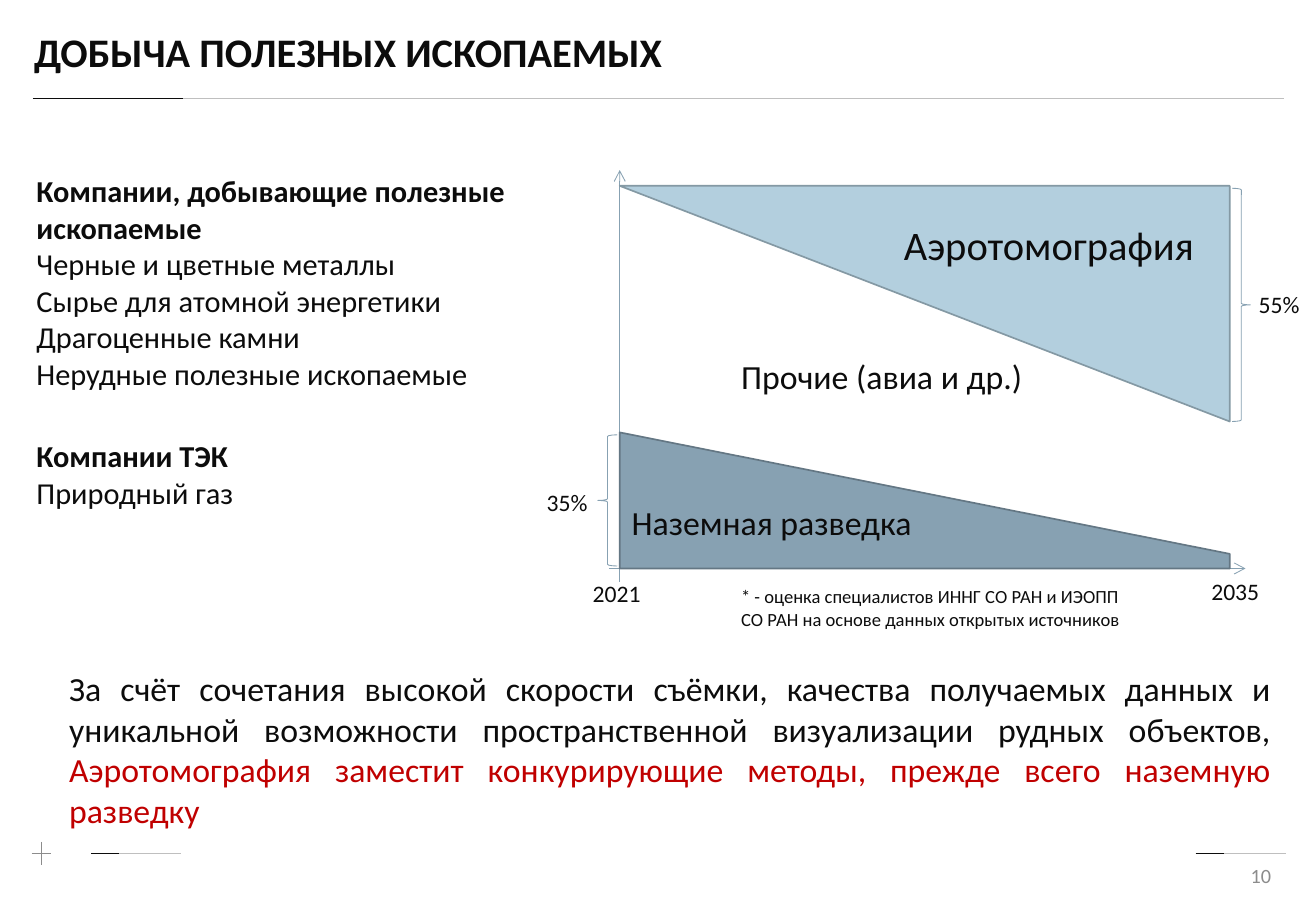
import pptx
import pptx.dml.color
import pptx.enum.shapes
import pptx.enum.text
import pptx.oxml
import pptx.oxml.ns
import pptx.util

# The grid: 108.3 columns by 75 rows of square cells
SLIDE_COLUMNS, SLIDE_ROWS = 108.3, 75
CELL = pptx.util.Inches(0.1)

INK, GREY, PALE_GREY, RED = "0C0C0C", "8C8C8C", "BFBFBF", "C00000"
STEEL, STEEL_EDGE, SKY, SKY_EDGE = "87A1B2", "647784", "B3CFDE", "8499A4"

ALIGN = pptx.enum.text.PP_ALIGN
ANCHOR = pptx.enum.text.MSO_ANCHOR
SHAPE = pptx.enum.shapes.MSO_SHAPE

# Chart edges on the grid
START, END, TOP, BASE = 51, 101.2, 15.3, 46.8
GROUND_2021, GROUND_2035, AERO_2035 = 35.6, 45.6, 34.7

COMPANY_LISTS = [
    ((2, 13.7, 47.2, 19.9), 2, [
        "Компании, добывающие полезные", "ископаемые",
        "Черные и цветные металлы", "Сырье для атомной энергетики",
        "Драгоценные камни", "Нерудные полезные ископаемые"]),
    ((2, 35.5, 47.2, 7.1), 1, ["Компании ТЭК", "Природный газ"]),
]

CHART_LABELS = [
    ("Аэротомография", 24, (73.4, 17.6, 27.8, 5)),
    ("Наземная разведка", 20, (51, 40.8, 25.4, 4.4)),
    ("Прочие (авиа и др.)", 20, (60, 28.8, 25.9, 4.4)),
    ("2021", 14, (47.8, 47.2, 6.4, 3.4)),
    ("2035", 14, (98.7, 47, 6.3, 3.4)),
    ("35%", 14, (44, 39.7, 6.6, 3.4)),
    ("55%", 14, (102.6, 23.4, 5.7, 3.4)),
    ("* - оценка специалистов ИННГ СО РАН и ИЭОПП СО РАН "
     "на основе данных открытых источников", 11, (60, 47.7, 34.7, 4.7)),
]


def color(hex_string):
    return pptx.dml.color.RGBColor.from_string(hex_string)


def cells(*values):
    return [round(value * CELL) for value in values]


def format_run(run, size, hex_string=INK, bold=False):
    run.font.name = "Calibri"
    run.font.size = pptx.util.Pt(size)
    run.font.bold = bold
    run.font.color.rgb = color(hex_string)


def place(shape, box):
    shape.left, shape.top, shape.width, shape.height = cells(*box)


def add_text(slide, box, parts, size, align=ALIGN.LEFT, anchor=ANCHOR.TOP):
    """Add one paragraph made of (text, colour) parts."""
    text_frame = slide.shapes.add_textbox(*cells(*box)).text_frame
    text_frame.word_wrap = True
    text_frame.vertical_anchor = anchor
    paragraph = text_frame.paragraphs[0]
    paragraph.alignment = align
    for text, hex_string in parts:
        run = paragraph.add_run()
        run.text = text
        format_run(run, size, hex_string)


def add_line(slide, start, end, hex_string, arrow=False):
    line = slide.shapes.add_connector(
        pptx.enum.shapes.MSO_CONNECTOR.STRAIGHT, *cells(*start, *end))
    line.line.color.rgb = color(hex_string)
    line.line.width = pptx.util.Pt(0.5)
    if arrow:
        tail = pptx.oxml.parse_xml(
            f'<a:tailEnd {pptx.oxml.ns.nsdecls("a")} type="arrow"/>')
        line.line._get_or_add_ln().append(tail)
    effects = pptx.oxml.parse_xml(f'<a:effectLst {pptx.oxml.ns.nsdecls("a")}/>')
    line._element.spPr.append(effects)


def add_accent_rule(slide, left, accent_end, right, row):
    add_line(slide, (left, row), (right, row), PALE_GREY)
    add_line(slide, (left, row), (accent_end, row), INK)


def style_shape(shape, edge, width, fill=None):
    shape.shadow.inherit = False
    shape.line.color.rgb = color(edge)
    shape.line.width = pptx.util.Pt(width)
    if fill:
        shape.fill.solid()
        shape.fill.fore_color.rgb = color(fill)
    else:
        shape.fill.background()


def add_brace(slide, kind, box):
    style_shape(slide.shapes.add_shape(kind, *cells(*box)), STEEL, 0.5)


def fill_title(title):
    place(title, (1.8, 0.9, 79.2, 7.2))
    title.text_frame.text = "ДОБЫЧА ПОЛЕЗНЫХ ИСКОПАЕМЫХ"
    title.text_frame.vertical_anchor = ANCHOR.MIDDLE
    paragraph = title.text_frame.paragraphs[0]
    paragraph.alignment = ALIGN.LEFT
    paragraph.line_spacing = 0.9
    format_run(paragraph.runs[0], 24, bold=True)


def fill_list(placeholder, box, heading_count, lines):
    place(placeholder, box)
    text_frame = placeholder.text_frame
    text_frame.text = "\n".join(lines)
    text_frame.auto_size = pptx.enum.text.MSO_AUTO_SIZE.NONE
    for index, paragraph in enumerate(text_frame.paragraphs):
        properties = paragraph._p.get_or_add_pPr()
        properties.set("marL", "0")
        properties.set("indent", "0")
        properties.append(pptx.oxml.parse_xml(
            f'<a:buNone {pptx.oxml.ns.nsdecls("a")}/>'))
        paragraph.space_before = pptx.util.Pt(0)
        format_run(paragraph.runs[0], 18, bold=index < heading_count)


def draw_frame(slide):
    # Rules under the title and in the footer
    add_accent_rule(slide, 2.7, 15.1, 105.7, 8.1)
    add_accent_rule(slide, 7.5, 9.8, 14.9, 70.3)
    add_accent_rule(slide, 98.4, 100.7, 105.8, 70.3)
    # Corner cross and page number
    add_line(slide, (3.4, 69.3), (3.4, 71.2), GREY)
    add_line(slide, (2.6, 70.3), (4.2, 70.3), GREY)
    add_text(slide, (81.2, 70.1, 24.4, 4), [("10", GREY)], 12,
             ALIGN.RIGHT, ANCHOR.MIDDLE)


def draw_market_chart(slide):
    # Axes
    add_line(slide, (START, 47.9), (START, 14), STEEL, arrow=True)
    add_line(slide, (50.1, BASE), (102.5, BASE), STEEL, arrow=True)

    # Shrinking share of ground exploration
    builder = slide.shapes.build_freeform(*cells(START, GROUND_2021))
    builder.add_line_segments([
        cells(END, GROUND_2035), cells(END, BASE), cells(START, BASE)])
    style_shape(builder.convert_to_shape(), STEEL_EDGE, 1, STEEL)

    # Growing share of aerotomography
    aero = slide.shapes.add_shape(
        SHAPE.RIGHT_TRIANGLE,
        *cells(START, TOP, END - START, AERO_2035 - TOP))
    aero.rotation = 180
    style_shape(aero, SKY_EDGE, 1, SKY)

    # Share braces and labels
    add_brace(slide, SHAPE.RIGHT_BRACE, (101.4, 15.5, 1.5, 19.2))
    add_brace(slide, SHAPE.LEFT_BRACE, (49.2, 35.8, 1.6, 10.8))
    for text, size, box in CHART_LABELS:
        add_text(slide, box, [(text, INK)], size)


def main():
    presentation = pptx.Presentation()
    presentation.slide_width, presentation.slide_height = cells(
        SLIDE_COLUMNS, SLIDE_ROWS)
    # Layout with a title and two bodies
    slide = presentation.slides.add_slide(presentation.slide_layouts[3])
    fill_title(slide.shapes.title)
    for index, company_list in enumerate(COMPANY_LISTS, start=1):
        fill_list(slide.placeholders[index], *company_list)
    draw_frame(slide)
    draw_market_chart(slide)

    # Conclusion
    add_text(slide, (4.7, 54.5, 100.9, 14.5), [
        ("За счёт сочетания высокой скорости съёмки, качества получаемых "
         "данных и уникальной возможности пространственной визуализации "
         "рудных объектов, ", INK),
        ("Аэротомография заместит конкурирующие методы, прежде всего "
         "наземную разведку", RED)], 20, ALIGN.JUSTIFY)
    presentation.save("out.pptx")


if __name__ == "__main__":
    main()
